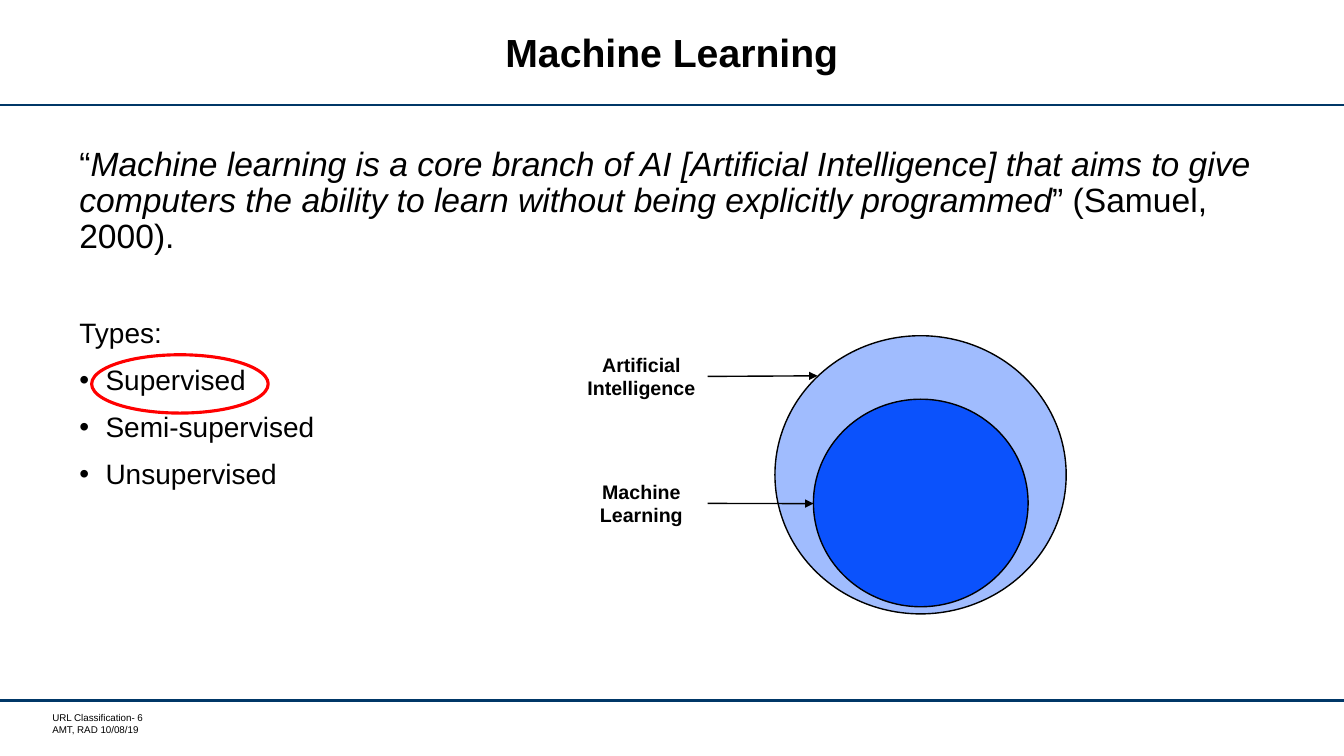
"""Build the Machine Learning slide: quote, learning types and nested circles."""
from lxml import etree
from pptx import Presentation
from pptx.dml.color import RGBColor
from pptx.enum.shapes import MSO_CONNECTOR, MSO_SHAPE
from pptx.enum.text import MSO_ANCHOR, PP_ALIGN
from pptx.oxml.ns import qn
from pptx.util import Cm, Pt

STRAIGHT = MSO_CONNECTOR.STRAIGHT
OVAL = MSO_SHAPE.OVAL
CENTER = PP_ALIGN.CENTER
MIDDLE = MSO_ANCHOR.MIDDLE
BLACK, NAVY, RED = "000000", "003767", "FF0000"


def style(obj, size, color=BLACK, bold=False, italic=False):
    f = obj.font
    f.name, f.size, f.bold, f.italic = "Arial", Pt(size), bold, italic
    f.color.rgb = RGBColor.from_string(color)


def add_line(x1, y1, x2, y2, color, width):
    c = s.shapes.add_connector(STRAIGHT, Cm(x1), Cm(y1), Cm(x2), Cm(y2))
    c.line.color.rgb = RGBColor.from_string(color)
    c.line.width = Pt(width)
    etree.SubElement(c._element.spPr, qn("a:effectLst"))
    return c


prs = Presentation()
prs.slide_width, prs.slide_height = Cm(33.87), Cm(19.05)
s = prs.slides.add_slide(prs.slide_layouts[5])

for y in (2.64, 17.65):
    add_line(0, y, 33.87, y, NAVY, 1.75)

footer = s.shapes.add_textbox(Cm(1.19), Cm(17.93), Cm(4.04), Cm(0.61))
tf = footer.text_frame
tf.word_wrap = True
tf.margin_left = Cm(0.13)
tf.margin_top = tf.margin_right = tf.margin_bottom = 0
tf.text = "URL Classification- 6\nAMT, RAD 10/08/19"
for p in tf.paragraphs:
    style(p.runs[0], 7)

title = s.shapes.title
title.left, title.top, title.width, title.height = Cm(3.48), Cm(0.28), Cm(26.9), Cm(2.26)
tf = title.text_frame
tf.text = "Machine Learning"
tf.vertical_anchor = MIDDLE
p = tf.paragraphs[0]
p.alignment = CENTER
p.line_spacing = Pt(28)
style(p.runs[0], 28, bold=True)

body = s.shapes.add_textbox(Cm(1.75), Cm(3.58), Cm(30.33), Cm(13.41))
tf = body.text_frame
tf.word_wrap = True
p = tf.paragraphs[0]
p.line_spacing = 0.9
quote = [
    ("“", False),
    ("Machine learning is a core branch of AI [Artificial Intelligence] that aims to give "
     "computers the ability to learn without being explicitly programmed", True),
    ("” (Samuel, 2000).", False),
]
for text, italic in quote:
    r = p.add_run()
    r.text = text
    style(r, 24, italic=italic)

for text in ("Types:", "Supervised", "Semi-supervised", "Unsupervised"):
    p = tf.add_paragraph()
    p.text = text
    p.line_spacing = 0.9
    p.space_before = Pt(45.6 if text == "Types:" else 12)
    if text != "Types:":
        pPr = p._p.get_or_add_pPr()
        pPr.set("marL", str(Cm(0.66)))
        pPr.set("indent", str(-Cm(0.66)))
        etree.SubElement(pPr, qn("a:buFont"), typeface="Arial")
        etree.SubElement(pPr, qn("a:buChar"), char="•")
    style(p.runs[0], 20)

ovals = [
    (19.53, 8.46, 7.34, 7.01, "A0BCFE", BLACK, 1),
    (20.5, 10.06, 5.41, 5.23, "0B52FC", BLACK, 1),
    (2.31, 8.94, 4.45, 1.47, None, RED, 2.25),
]
for x, y, w, h, fill, color, width in ovals:
    sp = s.shapes.add_shape(OVAL, Cm(x), Cm(y), Cm(w), Cm(h))
    sp.shadow.inherit = False
    if fill:
        sp.fill.solid()
        sp.fill.fore_color.rgb = RGBColor.from_string(fill)
    else:
        sp.fill.background()
    sp.line.color.rgb = RGBColor.from_string(color)
    sp.line.width = Pt(width)

labels = [
    ("Artificial Intelligence", 8.76, 20.6, 9.47),
    ("Machine Learning", 11.96, 20.5, 12.69),
]
for text, top, tip_x, tip_y in labels:
    label = s.shapes.add_textbox(Cm(14.5), Cm(top), Cm(3.33), Cm(1.45))
    tf = label.text_frame
    tf.word_wrap = True
    tf.text = text
    p = tf.paragraphs[0]
    p.alignment = CENTER
    style(p.runs[0], 14, bold=True)
    arrow = add_line(17.83, tip_y, tip_x, tip_y, BLACK, 1)
    arrow.begin_connect(label, 3)
    etree.SubElement(arrow.line._get_or_add_ln(), qn("a:tailEnd"), type="triangle")

prs.save("out.pptx")
